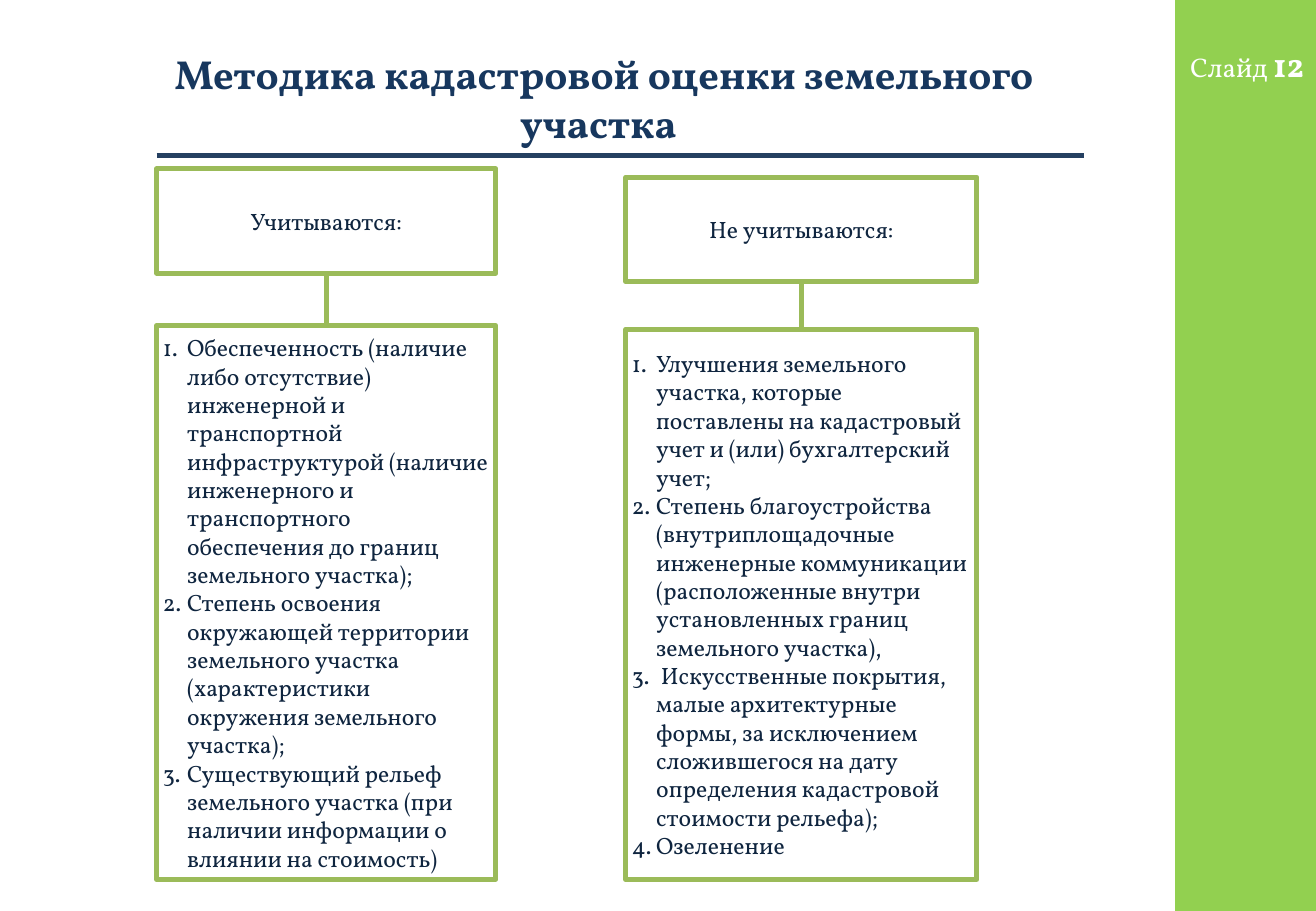
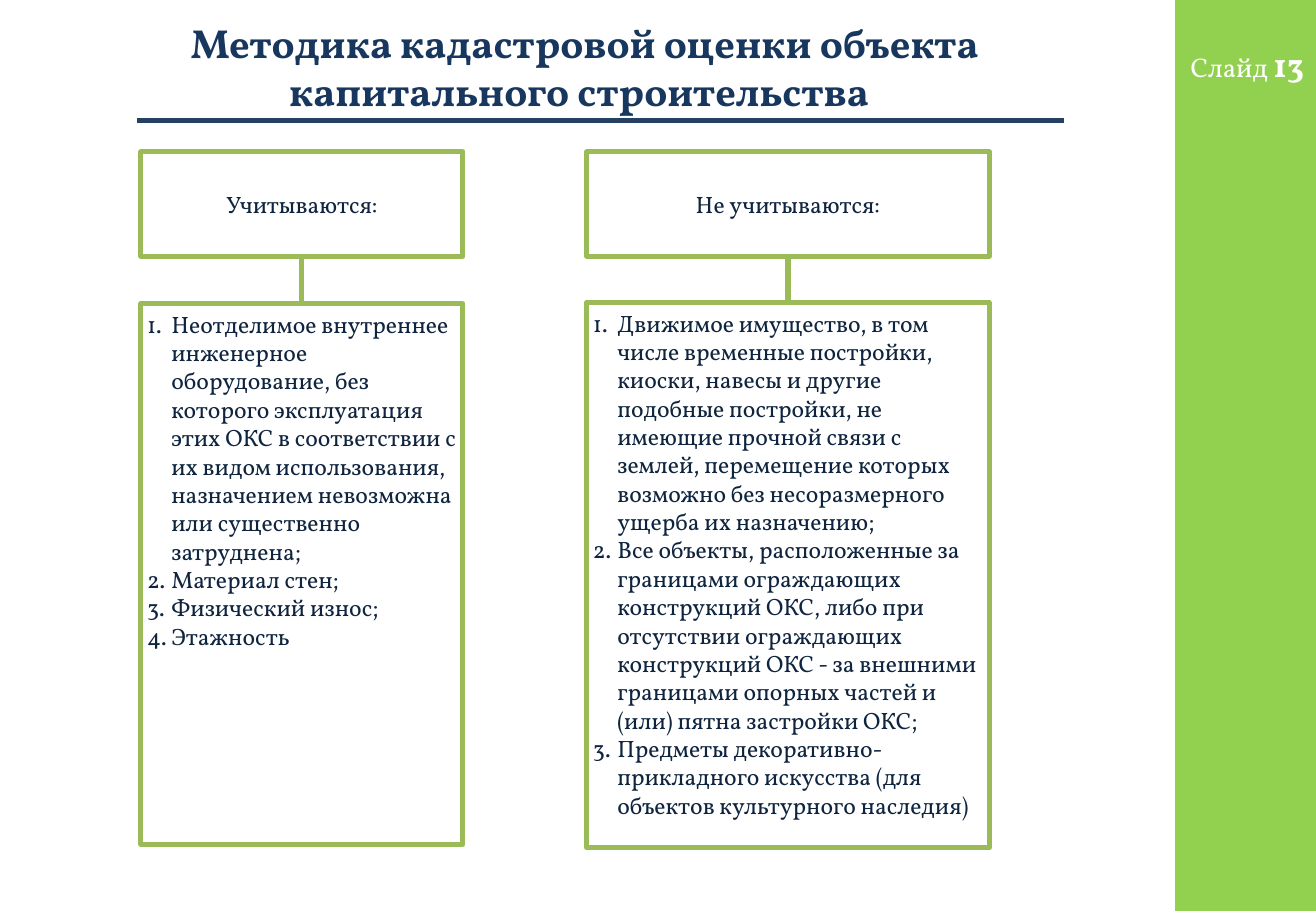
import pptx
import pptx.util
import pptx.dml.color
import pptx.enum.dml
import pptx.enum.shapes
import pptx.enum.text
import lxml.etree
import pptx.oxml.ns

Inches = pptx.util.Inches
Pt = pptx.util.Pt
Align = pptx.enum.text.PP_ALIGN
Anchor = pptx.enum.text.MSO_ANCHOR
Kind = pptx.enum.shapes.MSO_SHAPE
qn = pptx.oxml.ns.qn

COLORS = {
    "band": "92D050",
    "frame": "9BBB59",
    "rule": "254061",
    "title": "17375E",
    "body": "0F253F",
    "white": "FFFFFF",
}
FONTS = {
    "title": {"size": Pt(24), "bold": True},
    "body": {"size": Pt(14), "bold": False},
    "label": {"size": Pt(16), "bold": False},
    "number": {"size": Pt(20), "bold": True},
}
PAD = Inches(0.05)
HEAD = 0.86
STROKE = Pt(3)

SLIDES = [
    {
        "title": "Методика кадастровой оценки земельного участка",
        "number": "12",
        "place": (0.93, 0.35),
        "rule": (1.29, 1.28),
        "anchor": Anchor.MIDDLE,
        "columns": [
            {
                "head": "Учитываются:",
                "left": 1.29, "width": 2.79, "top": 1.39,
                "body": (2.68, 4.56),
                "items": [
                    "Обеспеченность (наличие либо отсутствие) инженерной и транспортной инфраструктурой (наличие инженерного и транспортного обеспечения до границ земельного участка);",
                    "Степень освоения окружающей территории земельного участка (характеристики окружения земельного участка);",
                    "Существующий рельеф земельного участка (при наличии информации о влиянии на стоимость)",
                ],
            },
            {
                "head": "Не учитываются:",
                "left": 5.15, "width": 2.89, "top": 1.46,
                "body": (2.71, 4.53),
                "items": [
                    "Улучшения земельного участка, которые поставлены на кадастровый учет и (или) бухгалтерский учет;",
                    "Степень благоустройства (внутриплощадочные инженерные коммуникации (расположенные внутри установленных границ земельного участка),",
                    " Искусственные покрытия, малые архитектурные формы, за исключением сложившегося на дату определения кадастровой стоимости рельефа);",
                    "Озеленение",
                ],
            },
        ],
    },
    {
        "title": "Методика кадастровой оценки объекта капитального строительства",
        "number": "13",
        "place": (0.77, 0.09),
        "rule": (1.13, 0.99),
        "anchor": Anchor.TOP,
        "columns": [
            {
                "head": "Учитываются:",
                "left": 1.16, "width": 2.65, "top": 1.25,
                "body": (2.5, 4.45),
                "items": [
                    "Неотделимое внутреннее инженерное оборудование, без которого эксплуатация этих ОКС в соответствии с их видом использования, назначением невозможна или существенно затруднена;",
                    "Материал стен;",
                    "Физический износ;",
                    "Этажность",
                ],
            },
            {
                "head": "Не учитываются:",
                "left": 4.83, "width": 3.31, "top": 1.25,
                "body": (2.49, 4.49),
                "items": [
                    "Движимое имущество, в том числе временные постройки, киоски, навесы и другие подобные постройки, не имеющие прочной связи с землей, перемещение которых возможно без несоразмерного ущерба их назначению;",
                    "Все объекты, расположенные за границами ограждающих конструкций ОКС, либо при отсутствии ограждающих конструкций ОКС - за внешними границами опорных частей и (или) пятна застройки ОКС;",
                    "Предметы декоративно-прикладного искусства (для объектов культурного наследия)",
                ],
            },
        ],
    },
]


def rgb(name):
    return pptx.dml.color.RGBColor.from_string(COLORS[name])


def assign(thing, values):
    for key, value in values.items():
        setattr(thing, key, value)


def write(para, text, style, color):
    run = para.add_run()
    run.text = text
    assign(run.font, {"name": "Vollkorn", **FONTS[style]})
    run.font.color.rgb = rgb(color)


def setup(frame, anchor, wrap=True):
    assign(frame, {
        "margin_left": PAD, "margin_right": PAD,
        "margin_top": PAD, "margin_bottom": PAD,
        "word_wrap": wrap, "vertical_anchor": anchor,
        "auto_size": pptx.enum.text.MSO_AUTO_SIZE.NONE,
    })


def indent(para, margin, first):
    props = para._p.get_or_add_pPr()
    props.set("marL", str(Inches(margin)))
    props.set("indent", str(Inches(first)))
    return props


def box(slide, area, fill, line=None):
    shape = slide.shapes.add_shape(Kind.RECTANGLE, *map(Inches, area))
    shape.shadow.inherit = False
    shape.fill.solid()
    shape.fill.fore_color.rgb = rgb(fill)
    if line:
        shape.line.color.rgb = rgb(line)
        shape.line.width = STROKE
    else:
        shape.line.fill.background()
    return shape


def join(slide, color, start=(0, 0), end=(0, 0)):
    line = slide.shapes.add_connector(
        pptx.enum.shapes.MSO_CONNECTOR.STRAIGHT, *map(Inches, start + end))
    line.line.color.rgb = rgb(color)
    line.line.width = STROKE
    lxml.etree.SubElement(line._element.spPr, qn("a:effectLst"))
    return line


def base(deck, data):
    slide = deck.slides.add_slide(deck.slide_layouts[5])
    title = slide.shapes.title
    left, top = data["place"]
    assign(title, {"left": Inches(left), "top": Inches(top),
                   "width": Inches(7.72), "height": Inches(0.91)})
    setup(title.text_frame, Anchor.MIDDLE)
    para = title.text_frame.paragraphs[0]
    assign(para, {"alignment": Align.CENTER, "space_before": Pt(5)})
    indent(para, 0.27, 0.09)
    write(para, data["title"], "title", "title")

    box(slide, (9.67, 0, 1.16, 7.5), "band")
    left, top = data["rule"]
    join(slide, "rule", (left, top), (left + 7.63, top))

    label = slide.shapes.add_textbox(*map(Inches, (9.71, 0.31, 1.11, 0.44)))
    setup(label.text_frame, Anchor.TOP, False)
    para = label.text_frame.paragraphs[0]
    para.alignment = Align.CENTER
    write(para, "Слайд ", "label", "white")
    write(para, data["number"], "number", "white")
    return slide


def column(slide, data, anchor):
    left, width = data["left"], data["width"]
    top, height = data["body"]
    head = box(slide, (left, data["top"], width, HEAD), "white", "frame")
    setup(head.text_frame, Anchor.MIDDLE)
    para = head.text_frame.paragraphs[0]
    para.alignment = Align.CENTER
    write(para, data["head"], "body", "body")

    body = box(slide, (left, top, width, height), "white", "frame")
    frame = body.text_frame
    setup(frame, anchor)
    for index, item in enumerate(data["items"]):
        para = frame.add_paragraph() if index else frame.paragraphs[0]
        para.alignment = Align.LEFT
        props = indent(para, 0.2, -0.2)
        mark = lxml.etree.SubElement(props, qn("a:buAutoNum"))
        mark.set("type", "arabicPeriod")
        write(para, item, "body", "body")

    link = join(slide, "frame")
    link.begin_connect(head, 2)
    link.end_connect(body, 0)


def main():
    deck = pptx.Presentation()
    deck.slide_width = Inches(10.83)
    deck.slide_height = Inches(7.5)
    for data in SLIDES:
        slide = base(deck, data)
        for part in data["columns"]:
            column(slide, part, data["anchor"])
    deck.save("out.pptx")


if __name__ == "__main__":
    main()
